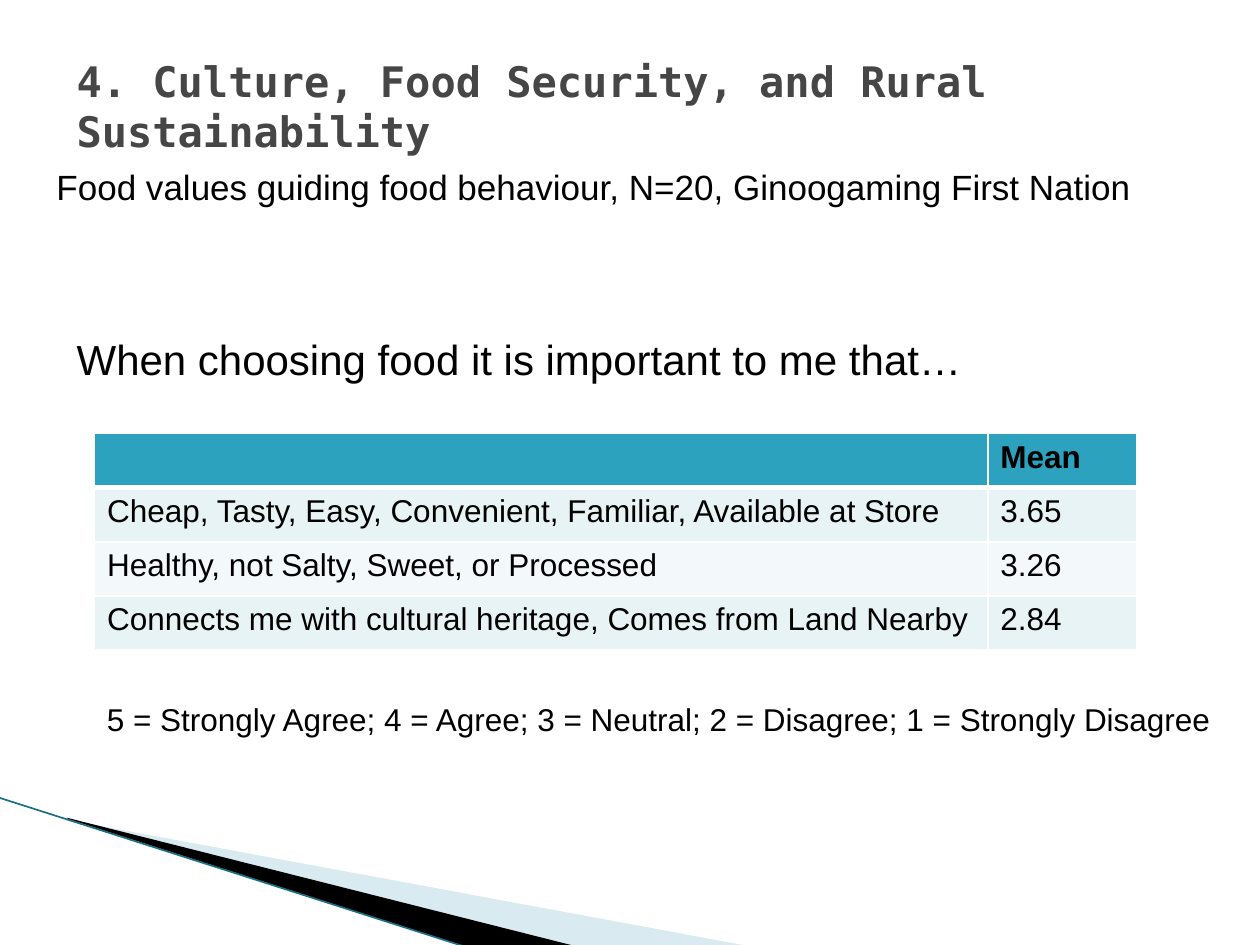
from lxml import etree
from pptx import Presentation
from pptx.dml.color import RGBColor
from pptx.enum.shapes import MSO_CONNECTOR
from pptx.oxml.ns import qn
from pptx.util import Inches, Pt

LINE = MSO_CONNECTOR.STRAIGHT
BLACK = RGBColor(0x00, 0x00, 0x00)
GREY = RGBColor(0x46, 0x46, 0x46)
TEAL = RGBColor(0x2D, 0xA2, 0xBF)
DEEP = RGBColor(0x1B, 0x6F, 0x82)
PALE = RGBColor(0xA0, 0xCB, 0xDC)
BAND = RGBColor(0xE7, 0xF3, 0xF4)
LIGHT = RGBColor(0xF3, 0xF9, 0xFA)

deck = Presentation()
deck.slide_width, deck.slide_height = Inches(10), Inches(7.5)
slide = deck.slides.add_slide(deck.slide_layouts[6])
shapes = slide.shapes


def add_edge(cell, side, width):
    """Draw a white border on one side (L, R, T or B), width in points."""
    edge = etree.SubElement(cell._tc.get_or_add_tcPr(), qn("a:ln" + side),
                            w=str(Pt(width)))
    fill = etree.SubElement(edge, qn("a:solidFill"))
    etree.SubElement(fill, qn("a:srgbClr"), val="FFFFFF")


def set_font(para, size, color=BLACK, name="Arial", bold=False):
    font = para.font
    font.size, font.name, font.bold = Pt(size), name, bold
    font.color.rgb = color


# Corner wedges
wedges = [
    (PALE, [(0.55, 6.51), (5.95, 7.51), (4.56, 7.51), (0.55, 6.5)]),
    (BLACK, [(0.53, 6.49), (4.57, 7.51), (3.72, 7.52), (0.54, 6.5)]),
]
for color, points in wedges:
    start, *rest = [(Inches(x), Inches(y)) for x, y in points]
    pen = shapes.build_freeform(*start)
    pen.add_line_segments(rest)
    wedge = pen.convert_to_shape()
    wedge.shadow.inherit = False
    wedge.fill.solid()
    wedge.fill.fore_color.rgb = color
    wedge.line.fill.background()
    if color == PALE:
        tint = wedge._element.spPr.find(".//" + qn("a:srgbClr"))
        etree.SubElement(tint, qn("a:alpha"), val="40000")

edge = shapes.add_connector(LINE, Inches(-0.01), Inches(6.33),
                            Inches(3.71), Inches(7.52))
edge.line.color.rgb = DEEP
edge.line.width = Pt(0.95)
etree.SubElement(edge._element.spPr, qn("a:effectLst"))

# Food values table
rows = [
    ("", "Mean"),
    ("Cheap, Tasty, Easy, Convenient, Familiar, Available at Store", "3.65"),
    ("Healthy, not Salty, Sweet, or Processed", "3.26"),
    ("Connects me with cultural heritage, Comes from Land Nearby", "2.84"),
]
table = shapes.add_table(len(rows), 2, Inches(0.75), Inches(3.44),
                         Inches(8.27), Inches(1.72)).table
table.columns[0].width = Inches(7.09)
table.columns[1].width = Inches(1.18)
for r, row in enumerate(rows):
    for c, text in enumerate(row):
        cell = table.cell(r, c)
        cell.text = text
        set_font(cell.text_frame.paragraphs[0], 18, bold=r == 0)
        widths = {"L": 1, "R": 1, "T": 3 if r == 1 else 1,
                  "B": 3 if r == 0 else 1}
        for side, width in widths.items():
            add_edge(cell, side, width)
        cell.fill.solid()
        cell.fill.fore_color.rgb = TEAL if r == 0 else BAND if r % 2 else LIGHT

# Texts: box, wrap, wording, font
texts = [
    ((0.75, 5.48, 8.99, 0.4), False,
     "5 = Strongly Agree; 4 = Agree; 3 = Neutral; 2 = Disagree; "
     "1 = Strongly Disagree", (18,)),
    ((0.51, 2.57, 7.22, 0.5), False,
     "When choosing food it is important to me that…", (24,)),
    ((0.35, 1.23, 9.13, 0.44), True,
     "Food values guiding food behaviour, N=20, Ginoogaming First Nation",
     (20,)),
    ((0.51, 0.36, 9, 0.85), True,
     "4. Culture, Food Security, and Rural Sustainability",
     (24, GREY, "DejaVu Sans Mono", True)),
]
for box, wrap, text, font in texts:
    frame = shapes.add_textbox(*map(Inches, box)).text_frame
    frame.word_wrap = wrap
    frame.margin_top = Inches(0.08)
    frame.text = text
    set_font(frame.paragraphs[0], *font)

deck.save("out.pptx")
